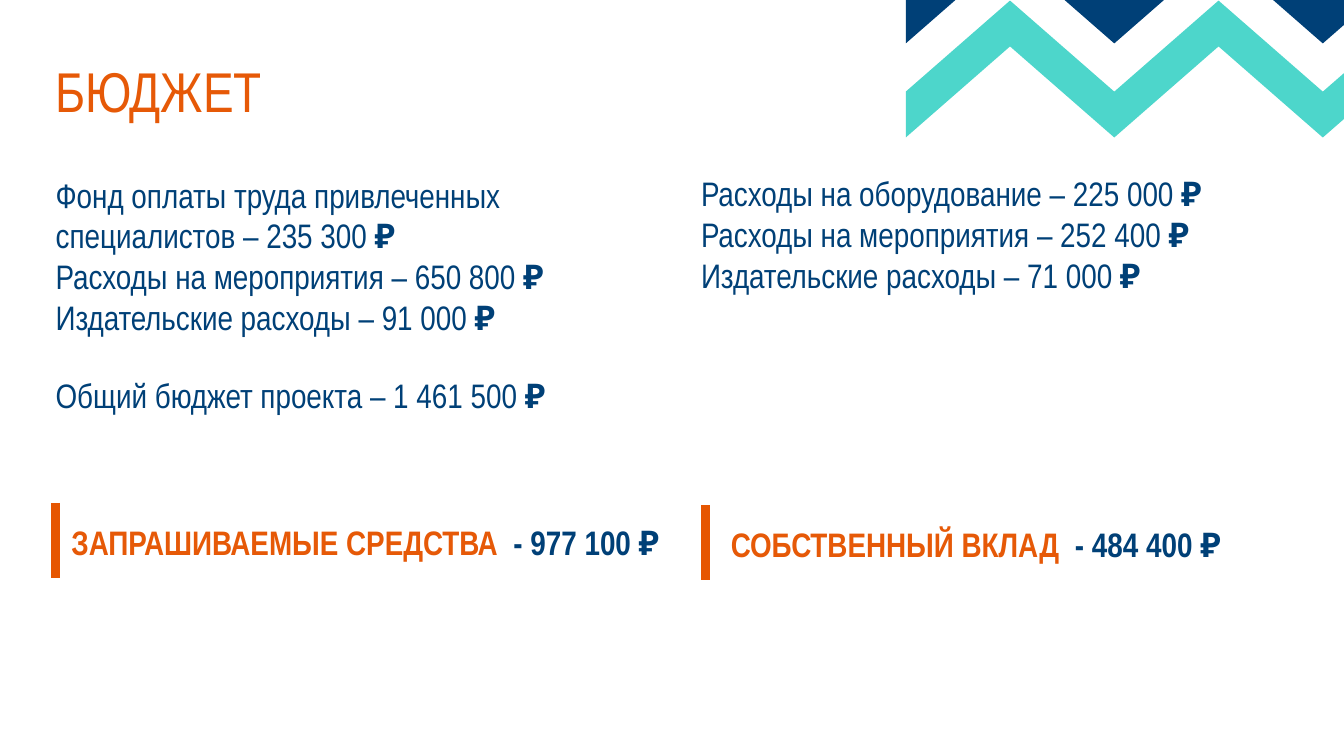
import pptx
import pptx.util
import pptx.dml.color
import pptx.enum.shapes
import pptx.enum.text
from lxml import etree

# Content
TITLE = "БЮДЖЕТ"
REQUESTED = [
    "Фонд оплаты труда привлеченных специалистов – 235 300",
    "Расходы на мероприятия – 650 800",
    "Издательские расходы – 91 000",
]
OWN = [
    "Расходы на оборудование – 225 000",
    "Расходы на мероприятия – 252 400",
    "Издательские расходы – 71 000",
]
TOTAL = ["Общий бюджет проекта – 1 461 500"]
RUBLE = " ₽"

COLORS = {"orange": "E65907", "bar": "E65601", "navy": "004077", "teal": "4DD6CB"}
FONT = "Arial Narrow"
BODY_SIZE = 40

# Layout in inches
WIDTH, HEIGHT = 21.99, 12.37
LEFT, RIGHT = 0.91, 11.47
COLUMN_W = 8.82
BAR_H = 1.22
LISTS = [  # left, top, height, lines
    (LEFT, 2.85, 2.89, REQUESTED),
    (RIGHT, 2.83, 2.89, OWN),
    (LEFT, 6.13, 0.84, TOTAL),
]
SUMS = [  # bar x, bar top, text left, text width, label, amount
    (LEFT, 8.23, 1.07, 10.23, "ЗАПРАШИВАЕМЫЕ СРЕДСТВА ", " - 977 100 ₽"),
    (11.54, 8.27, 11.86, 9.61, "СОБСТВЕННЫЙ ВКЛАД ", " - 484 400 ₽"),
]
ZIGZAG_X, ZIGZAG_STEP, ZIGZAG_DEPTH, ZIGZAG_BAND = 14.82, 1.706, 1.49, 0.75
ZIGZAGS = [(-1.53, "navy"), (0.01, "teal")]  # peak height, colour

inch = pptx.util.Inches


def rgb(name):
    return pptx.dml.color.RGBColor.from_string(COLORS[name])


def style(r, color, size=BODY_SIZE, bold=False):
    r.font.name = FONT
    r.font.size = pptx.util.Pt(size)
    r.font.bold = bold
    r.font.color.rgb = rgb(color)


def clear_margins(tf):
    tf.margin_left = tf.margin_right = tf.margin_top = tf.margin_bottom = 0


def add_text(s, left, top, width, height):
    tf = s.shapes.add_textbox(inch(left), inch(top), inch(width), inch(height)).text_frame
    tf.word_wrap = True
    return tf


def add_runs(p, parts):
    for text, color, bold in parts:
        r = p.add_run()
        r.text = text
        style(r, color, bold=bold)


def add_zigzag(s, peak, color):
    upper = [(ZIGZAG_X + i * ZIGZAG_STEP, peak + (i + 1) % 2 * ZIGZAG_DEPTH) for i in range(6)]
    lower = [(x, y + ZIGZAG_BAND) for x, y in reversed(upper)]
    points = [(inch(x), inch(y)) for x, y in upper + lower]
    builder = s.shapes.build_freeform(*points[0])
    builder.add_line_segments(points[1:], close=True)
    sp = builder.convert_to_shape()
    sp.shadow.inherit = False
    sp.fill.solid()
    sp.fill.fore_color.rgb = rgb(color)
    sp.line.fill.background()


def add_bar(s, x, top):
    line = s.shapes.add_connector(
        pptx.enum.shapes.MSO_CONNECTOR.STRAIGHT, inch(x), inch(top), inch(x), inch(top + BAR_H))
    line.line.color.rgb = rgb("bar")
    line.line.width = pptx.util.Pt(10)
    etree.SubElement(line._element.spPr, pptx.oxml.ns.qn("a:effectLst"))


prs = pptx.Presentation()
prs.slide_width, prs.slide_height = inch(WIDTH), inch(HEIGHT)
s = prs.slides.add_slide(prs.slide_layouts[5])

# Title
title = s.shapes.title
title.left, title.top, title.width, title.height = map(inch, (LEFT, 0.93, 20.25, 1.55))
tf = title.text_frame
tf.text = TITLE
clear_margins(tf)
tf.vertical_anchor = pptx.enum.text.MSO_ANCHOR.TOP
tf.paragraphs[0].alignment = pptx.enum.text.PP_ALIGN.LEFT
style(tf.paragraphs[0].runs[0], "orange", 66)

# Corner zigzags
for peak, color in ZIGZAGS:
    add_zigzag(s, peak, color)

# Expense lists and the project total
for left, top, height, lines in LISTS:
    tf = add_text(s, left, top, COLUMN_W, height)
    clear_margins(tf)
    for i, line in enumerate(lines):
        p = tf.add_paragraph() if i else tf.paragraphs[0]
        add_runs(p, [(line, "navy", False), (RUBLE, "navy", True)])

# Sums marked with bars
for x, top, left, width, label, amount in SUMS:
    add_bar(s, x, top)
    tf = add_text(s, left, top + 0.25, width, 0.77)
    add_runs(tf.paragraphs[0], [(label, "orange", True), (amount, "navy", True)])

prs.save("out.pptx")
